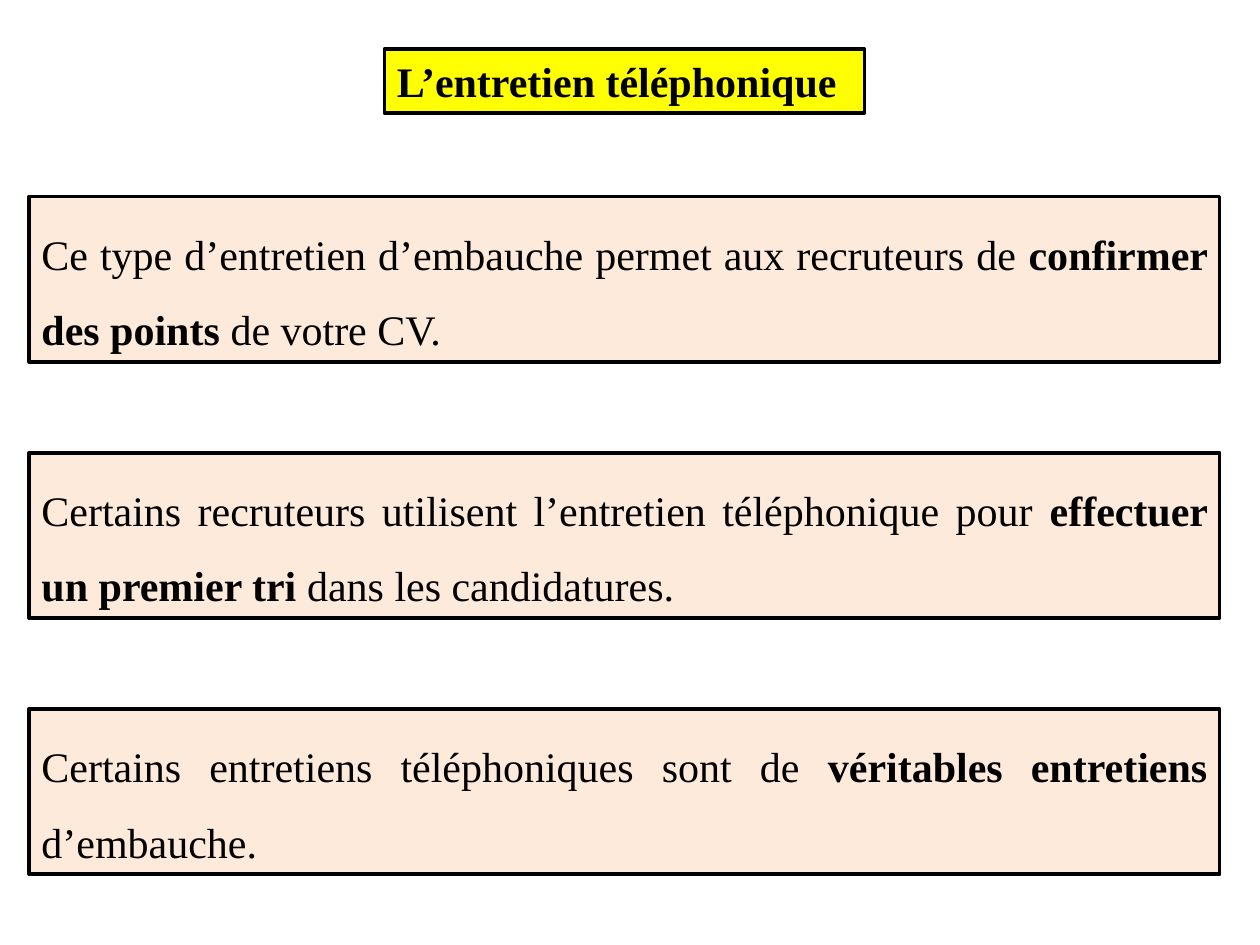
import pptx
import pptx.dml.color
import pptx.enum.text
import pptx.util

Pt = pptx.util.Pt
Align = pptx.enum.text.PP_ALIGN
Anchor = pptx.enum.text.MSO_ANCHOR
Fit = pptx.enum.text.MSO_AUTO_SIZE


def color(code):
    return pptx.dml.color.RGBColor.from_string(code)


def style(box, place, fill, form):
    """Place and outline a box, then format its one paragraph and its runs."""
    box.left, box.top, box.width, box.height = map(Pt, place)
    box.fill.solid()
    box.fill.fore_color.rgb = color(fill)
    box.line.color.rgb = color("000000")
    box.line.width = Pt(2)
    frame = box.text_frame
    for name, value in FRAME.items():
        setattr(frame, name, value)
    para = frame.paragraphs[0]
    for name, value in form.items():
        setattr(para, name, value)
    for run in para.runs:
        run.font.name = "Times New Roman"
        run.font.size = Pt(24)
        run.font.color.rgb = color("000000")


FRAME = {"word_wrap": True, "auto_size": Fit.NONE,
         "vertical_anchor": Anchor.TOP}
HEAD = {"alignment": Align.LEFT}
BODY = {"alignment": Align.JUSTIFY, "line_spacing": 1.5}

TEXTS = [
    ("Ce type d’entretien d’embauche permet aux recruteurs de ",
     "confirmer des points ", "de votre CV."),
    ("Certains recruteurs utilisent l’entretien téléphonique pour ",
     "effectuer un premier tri ", "dans les candidatures."),
    ("Certains entretiens téléphoniques sont de ",
     "véritables entretiens ", "d’embauche."),
]

deck = pptx.Presentation()
deck.slide_width, deck.slide_height = Pt(720), Pt(540)
slide = deck.slides.add_slide(deck.slide_layouts[5])

title = slide.shapes.title
title.text_frame.text = "L’entretien téléphonique"
title.text_frame.paragraphs[0].runs[0].font.bold = True
style(title, (219.6, 28.1, 274.4, 36.4), "FFFF00", HEAD)

left, top, width, height, step = 16.6, 112.4, 680.4, 94.4, 146.4
for row, parts in enumerate(TEXTS):
    place = (left, top + row * step, width, height)
    box = slide.shapes.add_textbox(*map(Pt, place))
    para = box.text_frame.paragraphs[0]
    for part, bold in zip(parts, (False, True, False)):
        run = para.add_run()
        run.text = part
        run.font.bold = bold
    style(box, place, "FDEADA", BODY)

deck.save("out.pptx")
